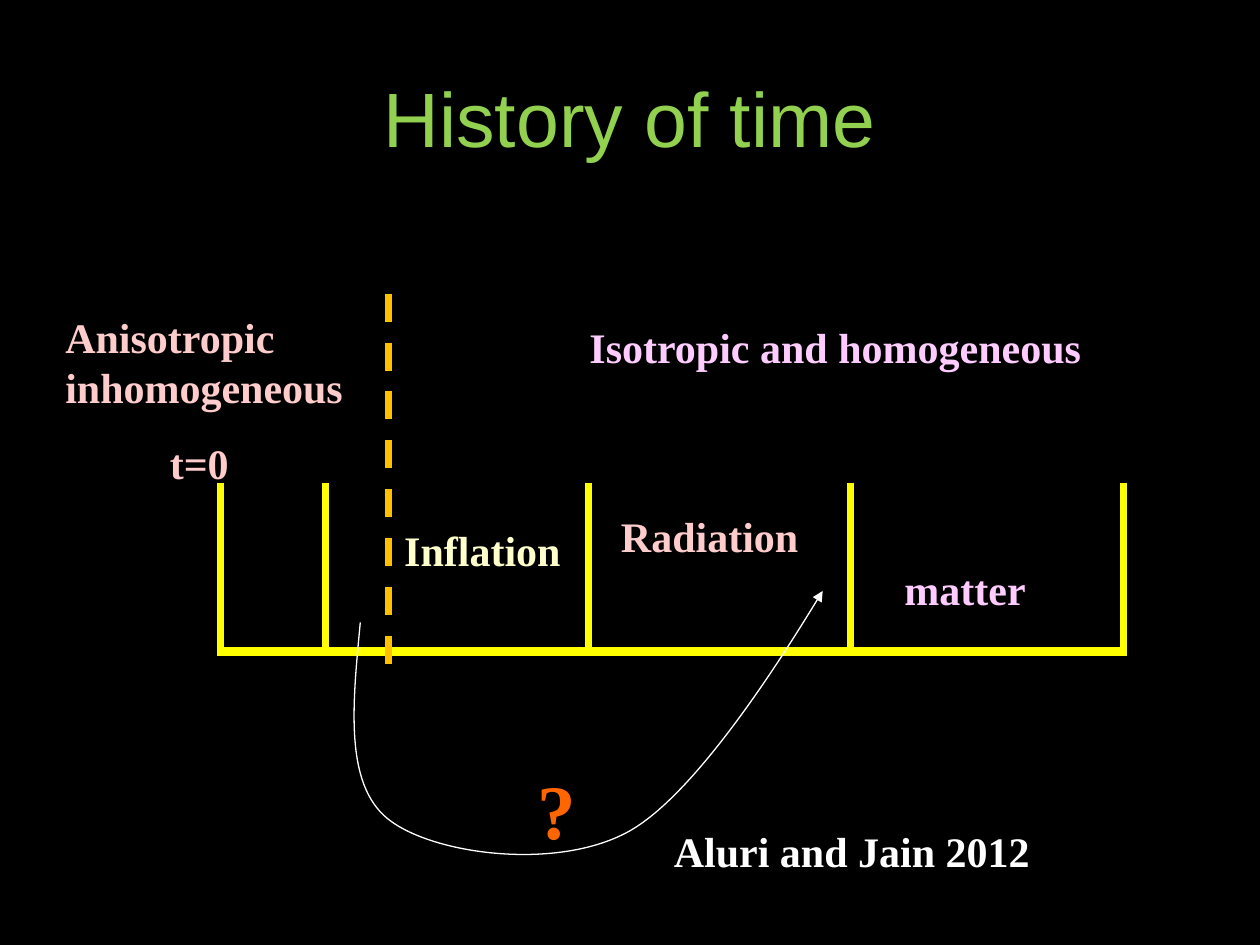
from pptx import Presentation
from pptx.dml.color import RGBColor
from pptx.enum import dml, shapes, text
from pptx.oxml import ns
from pptx.util import Inches, Pt
from lxml import etree

YELLOW, AMBER, WHITE = "FFFF00", "FFC000", "FFFFFF"
PINK, LILAC, CREAM = "FFCCCC", "FFCCFF", "FFFFCC"


def color(hex_string):
    return RGBColor.from_string(hex_string)


class Timeline:
    """Holds the text style and the slide being drawn."""

    font = "Times New Roman"
    size = 24

    def __init__(self, slide, background):
        self.slide = slide
        slide.background.fill.solid()
        slide.background.fill.fore_color.rgb = color(background)

    def text(self, content, box, hex_string, size=None, font=None, bold=True,
             wrap=False, grow=True, align=text.PP_ALIGN.LEFT,
             anchor=text.MSO_ANCHOR.TOP):
        shape = self.slide.shapes.add_textbox(*map(Inches, box))
        frame = shape.text_frame
        frame.text = content
        frame.word_wrap = wrap
        frame.auto_size = (text.MSO_AUTO_SIZE.SHAPE_TO_FIT_TEXT if grow
                           else text.MSO_AUTO_SIZE.NONE)
        frame.vertical_anchor = anchor
        for paragraph in frame.paragraphs:
            paragraph.alignment = align
            for run in paragraph.runs:
                run.font.name = font or self.font
                run.font.size = Pt(size or self.size)
                run.font.bold = bold
                run.font.color.rgb = color(hex_string)

    def line(self, start, end, hex_string, width, dash=None):
        connector = self.slide.shapes.add_connector(
            shapes.MSO_CONNECTOR.STRAIGHT, *map(Inches, start + end))
        connector.line.color.rgb = color(hex_string)
        connector.line.width = Pt(width)
        if dash:
            connector.line.dash_style = dash
        etree.SubElement(connector.element.spPr, ns.qn("a:effectLst"))

    def curved_arrow(self, start, points, hex_string, width):
        """Draw Bezier curves; points holds two controls and an end for each."""
        builder = self.slide.shapes.build_freeform(
            *map(Inches, start), scale=1.0)
        builder.add_line_segments(
            [(Inches(x), Inches(y)) for x, y in points], close=False)
        shape = builder.convert_to_shape()
        shape.shadow.inherit = False
        shape.fill.background()
        shape.line.color.rgb = color(hex_string)
        shape.line.width = Pt(width)
        segments = shape.element.xpath(".//a:lnTo")
        for first in range(0, len(segments), 3):
            curve = etree.Element(ns.qn("a:cubicBezTo"))
            segments[first].addprevious(curve)
            for segment in segments[first:first + 3]:
                curve.append(segment[0])
                segment.getparent().remove(segment)
        outline = shape.element.spPr.find(ns.qn("a:ln"))
        etree.SubElement(outline, ns.qn("a:tailEnd"), type="triangle")


def main():
    presentation = Presentation()
    presentation.slide_width = Inches(10)
    presentation.slide_height = Inches(7.5)
    slide = presentation.slides.add_slide(presentation.slide_layouts[6])
    timeline = Timeline(slide, "000000")

    timeline.text("History of time", (0.5, 0.3, 9, 1.25), "92D050", size=44,
                  font="Arial", bold=False, wrap=True, grow=False,
                  align=text.PP_ALIGN.CENTER, anchor=text.MSO_ANCHOR.MIDDLE)

    timeline.line((1.75, 5.17), (8.9, 5.17), YELLOW, 5.25)
    for x in (1.75, 2.58, 4.67, 6.75, 8.92):
        timeline.line((x, 3.83), (x, 5.21), YELLOW, 4)

    timeline.text("t=0", (1.25, 3.42, 0.84, 0.51), PINK)
    timeline.text("Inflation", (3.11, 4.11, 1.54, 0.51), CREAM)
    timeline.text("Radiation", (4.83, 4, 2.44, 0.5), PINK, wrap=True)
    timeline.text("matter", (7.08, 4.42, 2.44, 0.5), LILAC, wrap=True)

    timeline.line((3.08, 2.33), (3.08, 5.32), AMBER, 4, dml.MSO_LINE.DASH)
    timeline.text("Anisotropic\ninhomogeneous", (0.42, 2.42, 2.6, 0.91), PINK)
    timeline.text("Isotropic and homogeneous", (4.58, 2.5, 4.14, 0.51), LILAC)

    timeline.curved_arrow(
        (2.86, 4.94),
        [(2.8, 5.58), (2.73, 6.22), (3.08, 6.5),
         (3.43, 6.78), (4.4, 6.91), (4.97, 6.61),
         (5.55, 6.31), (6.53, 4.69), (6.53, 4.69)],
        WHITE, 0.75)
    timeline.text("?", (4.17, 6, 0.51, 0.84), "FF6600", size=44)
    timeline.text("Aluri and Jain 2012", (5.25, 6.5, 3.05, 0.51), WHITE)

    presentation.save("out.pptx")


if __name__ == "__main__":
    main()
